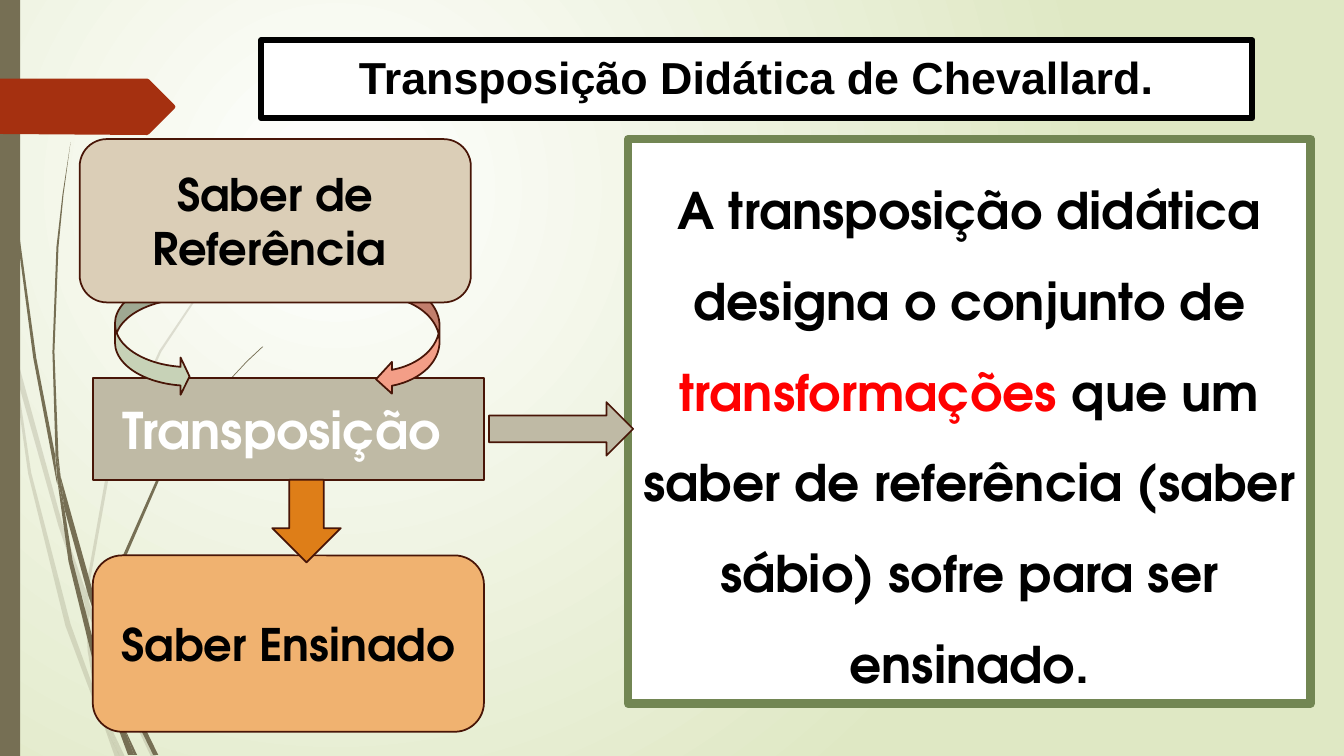
from dataclasses import dataclass

from lxml import etree
from pptx import Presentation
from pptx.dml.color import RGBColor
from pptx.enum.shapes import MSO_SHAPE
from pptx.enum.text import MSO_ANCHOR, PP_ALIGN
from pptx.oxml import parse_xml
from pptx.oxml.ns import qn
from pptx.util import Pt

PX = 9144  # EMU per px, 100 px to the inch
WIDTH, HEIGHT = 1333, 750
RECT, ROUND = MSO_SHAPE.RECTANGLE, MSO_SHAPE.ROUNDED_RECTANGLE
DOWN, RIGHT = MSO_SHAPE.DOWN_ARROW, MSO_SHAPE.RIGHT_ARROW
CURVED_LEFT, CURVED_RIGHT = MSO_SHAPE.CURVED_LEFT_ARROW, MSO_SHAPE.CURVED_RIGHT_ARROW
CENTER, MIDDLE = PP_ALIGN.CENTER, MSO_ANCHOR.MIDDLE


@dataclass(frozen=True)
class Theme:
    title_font: str = "Arial"
    body_font: str = "TeX Gyre Adventor"
    medium: int = 32
    large: int = 36
    outline_pt: float = 1.25
    black: str = "000000"
    white: str = "FFFFFF"
    red: str = "FF0000"
    back: str = "DFE8C4"
    stalk: str = "766F54"
    ribbon: str = "A53010"
    outline: str = "481507"
    frame: str = "728653"
    stone: str = "BFBAA5"
    sand: str = "DBCEB7"
    peach: str = "F0B270"
    orange: str = "DE7E18"
    salmon: str = "F39E87"
    sage: str = "C7D2B7"


T = Theme()

# Outlines of the grass blades, x and y in px
PALE_BLADES = [
    [(11, 350), (9, 322), (0, 282), (0, 299), (10, 344)],
    [(58, 522), (84, 599), (85, 586), (62, 520), (14, 345), (17, 376)],
    [(92, 607), (88, 596), (88, 610), (123, 694), (150, 751), (155, 751), (127, 692)],
    [(119, 751), (124, 751), (105, 711)],
    [(93, 683), (70, 619), (31, 469), (17, 376), (11, 350), (28, 470), (65, 621),
     (92, 693), (101, 714), (99, 707)],
    [(84, 599), (87, 646), (93, 683), (96, 692), (105, 711), (103, 706), (91, 646),
     (88, 610), (88, 608)],
    [(88, 584), (110, 462), (160, 349), (229, 245), (268, 198), (290, 175), (312, 154),
     (312, 153), (289, 175), (268, 197), (228, 244), (158, 348), (107, 461), (85, 584),
     (85, 586), (88, 596)],
    [(101, 714), (114, 751), (119, 751)],
    [(88, 608), (88, 610), (88, 596), (85, 586), (84, 599)],
    [(96, 692), (93, 683), (99, 707), (101, 714), (119, 751), (105, 711)],
]
DARK_BLADES = [
    [(7, 110), (17, 233), (33, 355), (56, 477), (57, 481), (55, 457), (55, 453),
     (36, 355), (19, 232), (8, 109), (5, 48), (4, 0), (3, 0), (4, 48)],
    [(88, 592), (106, 645), (106, 633), (106, 631), (93, 590), (60, 472), (64, 505)],
    [(113, 649), (110, 641), (111, 656), (132, 708), (152, 749), (157, 749), (136, 706)],
    [(110, 691), (98, 657), (72, 556), (64, 505), (57, 477), (68, 557), (93, 659),
     (111, 708), (117, 722), (116, 717)],
    [(60, 472), (58, 453), (54, 349), (58, 245), (63, 193), (70, 141), (62, 193),
     (56, 245), (52, 349), (55, 449)],
    [(133, 749), (136, 749), (122, 719)],
    [(57, 477), (64, 505), (60, 472), (55, 449), (55, 453)],
    [(111, 633), (125, 552), (158, 476), (205, 406), (231, 374), (245, 359), (261, 344),
     (260, 344), (245, 358), (231, 373), (204, 405), (156, 474), (122, 551), (106, 631),
     (110, 641)],
    [(117, 722), (127, 749), (131, 749)],
    [(116, 706), (110, 691), (116, 717), (117, 722), (130, 749), (133, 749), (122, 719)],
]
RIBBON = [(0, 78), (146, 78), (148, 79), (173, 104), (174, 106), (173, 108),
          (148, 133), (146, 134), (0, 133)]


def paint(sp, fill, line=None, line_pt=T.outline_pt):
    sp.fill.solid()
    sp.fill.fore_color.rgb = RGBColor.from_string(fill)
    if line:
        sp.line.color.rgb = RGBColor.from_string(line)
        sp.line.width = Pt(line_pt)
    else:
        sp.line.fill.background()


def place(sp, box):
    sp.left, sp.top, sp.width, sp.height = (v * PX for v in box)


def add_shape(shapes, kind, box, fill, line=None, line_pt=T.outline_pt):
    sp = shapes.add_shape(kind, *(v * PX for v in box))
    sp.shadow.inherit = False
    paint(sp, fill, line, line_pt)
    return sp


def add_outline(shapes, points, fill):
    builder = shapes.build_freeform(*points[0], scale=PX)
    builder.add_line_segments(points[1:], close=True)
    sp = builder.convert_to_shape()
    sp.shadow.inherit = False
    paint(sp, fill)
    return sp


def write(sp, runs, size, font=T.body_font, spacing=None):
    """Fill the shape with one centred paragraph of (text, colour) runs."""
    tf = sp.text_frame
    tf.word_wrap = True
    tf.vertical_anchor = MIDDLE
    p = tf.paragraphs[0]
    p.alignment = CENTER
    if spacing:
        p.line_spacing = spacing
    for text, color in runs:
        r = p.add_run()
        r.text = text
        r.font.name, r.font.size, r.font.bold = font, Pt(size), True
        r.font.color.rgb = RGBColor.from_string(color)


def set_background(slide):
    slide.background.fill.solid()
    solid = slide.element.find(".//" + qn("p:bgPr")).find(qn("a:solidFill"))
    solid.getparent().replace(solid, parse_xml(
        '<a:gradFill xmlns:a="http://schemas.openxmlformats.org/drawingml/2006/main"'
        ' rotWithShape="1"><a:gsLst>'
        f'<a:gs pos="0"><a:srgbClr val="{T.white}"/></a:gs>'
        f'<a:gs pos="100000"><a:srgbClr val="{T.back}"/></a:gs></a:gsLst>'
        '<a:path path="circle"><a:fillToRect l="50000" t="50000" r="100000" b="100000"/>'
        '</a:path></a:gradFill>'))


def add_decoration(slide, box):
    x, y, _, height = box
    for blades, alpha in ((PALE_BLADES, 20), (DARK_BLADES, 100)):
        group = slide.shapes.add_group_shape()
        for points in blades:
            sp = add_outline(group.shapes, [(x + a, y + b) for a, b in points], T.stalk)
            if alpha < 100:
                color = sp.element.spPr.find(qn("a:solidFill")).find(qn("a:srgbClr"))
                etree.SubElement(color, qn("a:alpha"), val=str(alpha * 1000))
    add_shape(slide.shapes, RECT, (x, y, 20, height), T.stalk)
    add_outline(slide.shapes, [(x + a, y + b) for a, b in RIBBON], T.ribbon)


def add_title(slide, box):
    title = slide.shapes.title
    place(title, box)
    paint(title, T.white, T.black, 4.5)
    write(title, [("Transposição Didática de Chevallard.", T.black)], T.medium, T.title_font)
    title.text_frame.margin_bottom = 10 * PX


def add_definition(slide, box):
    sp = add_shape(slide.shapes, RECT, box, T.white, T.frame, 6)
    write(sp, [("A transposição didática designa o conjunto de ", T.black),
               ("transformações ", T.red),
               ("que um saber de referência (saber sábio) sofre para ser ensinado.", T.black)],
          T.large, spacing=1.5)


def add_flow(slide, box):
    x, y, width, _ = box

    def part(kind, dx, dy, w, h, fill):
        return add_shape(slide.shapes, kind, (x + dx, y + dy, w, h), fill, T.outline)

    transposition = part(RECT, 13, 237, width, 101, T.stone)
    write(transposition, [("Transposição ", T.white)], T.large)
    taught = part(ROUND, 13, 413, width, 175, T.peach)
    write(taught, [("Saber Ensinado", T.black)], T.medium)
    part(CURVED_LEFT, 294, 140, 63, 114, T.salmon)
    part(CURVED_RIGHT, 35, 140, 74, 114, T.sage).adjustments[2] = 0.12
    reference = part(ROUND, 0, 0, width, 162, T.sand)
    write(reference, [("Saber de Referência ", T.black)], T.medium)
    part(DOWN, 191, 338, 68, 82, T.orange)
    part(RIGHT, 406, 261, 143, 53, T.stone)


def main():
    prs = Presentation()
    prs.slide_width, prs.slide_height = WIDTH * PX, HEIGHT * PX
    slide = prs.slides.add_slide(prs.slide_layouts[5])
    set_background(slide)
    add_decoration(slide, (0, 0, WIDTH, HEIGHT))
    add_title(slide, (259, 40, 983, 77))
    add_definition(slide, (623, 138, 677, 560))
    add_flow(slide, (79, 138, 388, 588))
    prs.save("out.pptx")


if __name__ == "__main__":
    main()
